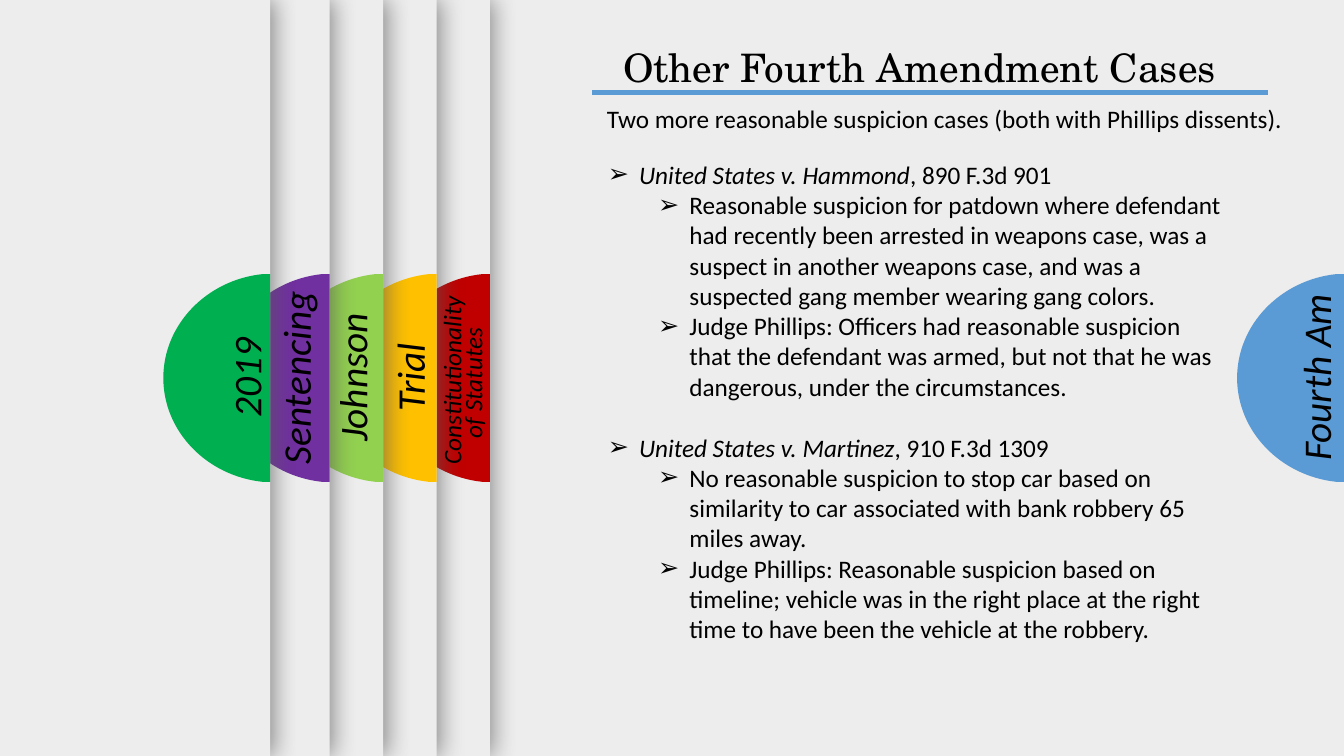
from lxml.etree import SubElement
from pptx import Presentation
from pptx.dml.color import RGBColor
from pptx.enum.shapes import MSO_CONNECTOR as Connector, MSO_SHAPE as Shape
from pptx.enum.text import MSO_AUTO_SIZE as AutoSize, PP_ALIGN as Align
from pptx.oxml.ns import qn
from pptx.util import Inches, Pt

SLIDE_WIDTH, SLIDE_HEIGHT = 13.33, 7.5
PANEL, SHADOW, BLACK, BLUE = "EDEDED", "595959", "000000", "5B9BD5"
BODY_FONT, TITLE_FONT = "Calibri", "TeX Gyre Schola"
TAB_WIDTH, TAB_HEIGHT, TAB_TOP = 1.06, 2.06, 2.72
# Two curves of the tab's round side, measured from its top left corner
TAB_CURVES = [
    [(0.43, 2.0), (0, 1.56), (0, 1.03)],
    [(0, 0.5), (0.43, 0.06), (0.98, 0)],
]
LABEL_WIDTH = 2.44

# Back to front: right edge, panel width, tab colour
TABS = [
    (13.33, 16.37, BLUE),
    (4.86, 13.33, "C00000"),
    (4.33, 13.33, "FFC000"),
    (3.8, 13.33, "92D050"),
    (3.27, 13.33, "7030A0"),
    (2.68, 13.33, "00B050"),
]
# Lines, centre across, top, height, size, line spacing
LABELS = [
    (["Fourth Am"], 13.05, 3.46, 0.57, 28, None),
    (["Johnson"], 3.49, 3.46, 0.57, 28, None),
    (["Sentencing"], 2.93, 3.46, 0.57, 28, None),
    (["2019"], 2.44, 3.46, 0.57, 28, None),
    (["Trial"], 4.06, 3.46, 0.57, 28, None),
    (["Constitutionality", "of Statutes "], 4.64, 3.5, 0.54, 18, 15),
]
TITLE = "Other Fourth Amendment Cases"
INTRO = "Two more reasonable suspicion cases (both with Phillips dissents)."
CASES = [
    ("United States v. Hammond", ", 890 F.3d 901", [
        "Reasonable suspicion for patdown where defendant had recently been arrested in weapons "
        "case, was a suspect in another weapons case, and was a suspected gang member wearing "
        "gang colors.",
        "Judge Phillips: Officers had reasonable suspicion that the defendant was armed, but not "
        "that he was dangerous, under the circumstances.",
    ]),
    ("United States v. Martinez", ", 910 F.3d 1309", [
        "No reasonable suspicion to stop car based on similarity to car associated with bank "
        "robbery 65 miles away.",
        "Judge Phillips: Reasonable suspicion based on timeline; vehicle was in the right place "
        "at the right time to have been the vehicle at the robbery.",
    ]),
]


def color(hex_code):
    return RGBColor.from_string(hex_code)


def fill_plain(shape, hex_code):
    shape.fill.solid()
    shape.fill.fore_color.rgb = color(hex_code)
    shape.line.fill.background()
    shape.shadow.inherit = False


def add_panel(slide, right, width):
    """Add a full-height sheet that casts a soft shadow to its right."""
    panel = slide.shapes.add_shape(
        Shape.RECTANGLE, Inches(right - width), 0, Inches(width), Inches(SLIDE_HEIGHT))
    fill_plain(panel, PANEL)
    effects = panel.element.spPr.find(qn("a:effectLst"))
    shadow = SubElement(effects, qn("a:outerShdw"), blurRad=str(Pt(17)), dist=str(Pt(3)),
                        dir="0", algn="l", rotWithShape="0")
    tint = SubElement(shadow, qn("a:srgbClr"), val=SHADOW)
    SubElement(tint, qn("a:alpha"), val="65000")


def add_tab(slide, right, hex_code):
    """Add a half disc whose flat side lies on the panel edge."""
    left = right - TAB_WIDTH
    corners = [(TAB_WIDTH, TAB_HEIGHT), (0.98, TAB_HEIGHT)] + [curve[-1] for curve in TAB_CURVES]
    outline = slide.shapes.build_freeform(Inches(right), Inches(TAB_TOP), scale=1.0)
    outline.add_line_segments(
        [(Inches(left + x), Inches(TAB_TOP + y)) for x, y in corners], close=True)
    tab = outline.convert_to_shape()
    fill_plain(tab, hex_code)
    sides = list(tab.element.spPr.iter(qn("a:lnTo")))[2:4]
    for side, curve in zip(sides, TAB_CURVES):
        parent = side.getparent()
        bend = SubElement(parent, qn("a:cubicBezTo"))
        for x, y in curve:
            SubElement(bend, qn("a:pt"), x=str(Inches(x)), y=str(Inches(y)))
        parent.replace(side, bend)


def add_text(slide, paragraphs, left, top, width, height, *, size=18, font=BODY_FONT,
             align=Align.LEFT, spacing=None, rotation=0, inset=0.05):
    """Each paragraph is (runs, level, space before); runs are (text, italic); level None has no bullet."""
    box = slide.shapes.add_textbox(Inches(left), Inches(top), Inches(width), Inches(height))
    box.rotation = rotation
    frame = box.text_frame
    frame.word_wrap = True
    frame.auto_size = AutoSize.SHAPE_TO_FIT_TEXT
    frame.margin_top = Inches(inset)
    for index, (runs, level, before) in enumerate(paragraphs):
        paragraph = frame.add_paragraph() if index else frame.paragraphs[0]
        paragraph.alignment = align
        if before:
            paragraph.space_before = Pt(before)
        if spacing:
            paragraph.line_spacing = Pt(spacing)
        if level is not None:
            paragraph.level = level
            properties = paragraph._p.get_or_add_pPr()
            properties.set("marL", str(Inches(0.31 + 0.5 * level)))
            properties.set("indent", str(Inches(-0.31)))
            SubElement(properties, qn("a:buFont"), typeface=BODY_FONT)
            SubElement(properties, qn("a:buChar"), char="➢")
        for text, italic in runs:
            run = paragraph.add_run()
            run.text = text
            run.font.name = font
            run.font.size = Pt(size)
            run.font.italic = italic
            run.font.color.rgb = color(BLACK)


def add_rule(slide, left, right, y):
    rule = slide.shapes.add_connector(
        Connector.STRAIGHT, Inches(left), Inches(y), Inches(right), Inches(y))
    rule.line.color.rgb = color(BLUE)
    rule.line.width = Pt(3.25)
    SubElement(rule._element.spPr, qn("a:effectLst"))


def main():
    presentation = Presentation()
    presentation.slide_width = Inches(SLIDE_WIDTH)
    presentation.slide_height = Inches(SLIDE_HEIGHT)
    slide = presentation.slides.add_slide(presentation.slide_layouts[6])

    for right, width, hex_code in TABS:
        add_panel(slide, right, width)
        add_tab(slide, right, hex_code)

    add_text(slide, [([(TITLE, False)], None, 0)], 5.18, 0.38, 7.88, 0.57,
             size=28, font=TITLE_FONT, align=Align.CENTER)

    body = []
    for name, citation, points in CASES:
        body.append(([(name, True), (citation, False)], 0, 22 if body else 0))
        body += [([(point, False)], 1, 0) for point in points]
    add_text(slide, body, 5.93, 1.23, 6.35, 5.25, inset=0.35)

    for lines, center, top, height, size, spacing in LABELS:
        add_text(slide, [([(line, True)], None, 0) for line in lines],
                 center - LABEL_WIDTH / 2, top, LABEL_WIDTH, height,
                 size=size, align=Align.CENTER, spacing=spacing, rotation=270)

    add_rule(slide, 5.87, 12.58, 0.92)
    add_text(slide, [([(INTRO, False)], None, 0)], 5.92, 0.98, 6.98, 0.71)

    presentation.save("out.pptx")


if __name__ == "__main__":
    main()
